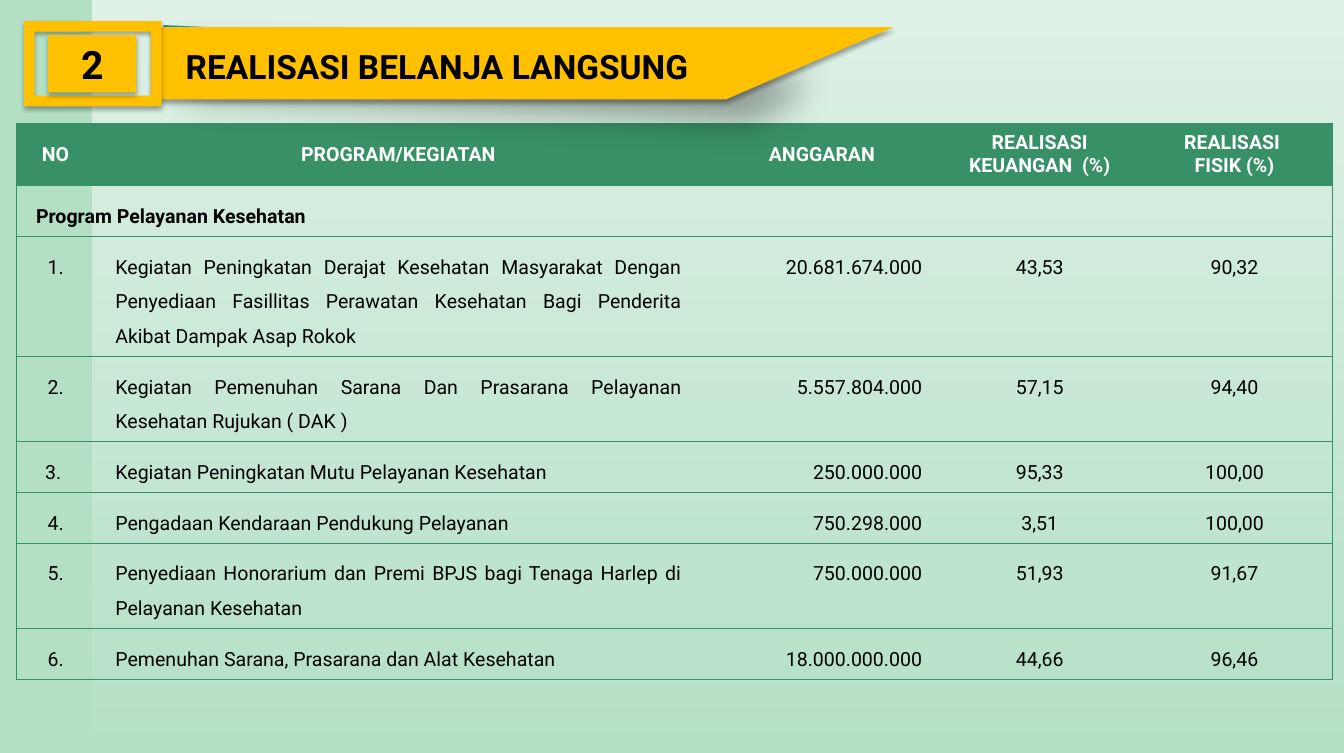
from lxml.etree import SubElement
from pptx import Presentation
from pptx.dml.color import RGBColor
from pptx.enum.shapes import MSO_SHAPE as Preset
from pptx.enum.text import MSO_ANCHOR as Anchor, MSO_AUTO_SIZE as AutoSize, PP_ALIGN as Align
from pptx.oxml.ns import qn
from pptx.util import Inches, Pt

COLORS = {"mint": "B3E0C5", "green": "389066", "teal": "1B91A1",
          "amber": "FFC000", "white": "FFFFFF", "black": "000000"}
NO_GRID_STYLE = "{2D5ABB26-0587-4C30-8999-92F81FD0307C}"
SOFT_SHADOW = (32, 3.5, 2.2, 90)
DEEP_SHADOW = (35, 25, 25, 45)

COLUMN_SHARES = (5.9, 45.11, 17.92, 14.49, 14.49)
ROW_SHARES = (8.27, 5.07, 11.33, 7.73, 5.07, 6, 10.53, 6)
COLUMN_ALIGNS = (Align.CENTER, Align.JUSTIFY, Align.RIGHT, Align.CENTER, Align.CENTER)
HEADINGS = ("NO", "PROGRAM/KEGIATAN", "ANGGARAN", "REALISASI KEUANGAN  (%)", "REALISASI \nFISIK (%)")
SECTION = "Program Pelayanan Kesehatan"
ACTIVITIES = (
    ("1.", "Kegiatan Peningkatan Derajat Kesehatan Masyarakat Dengan Penyediaan Fasillitas "
     "Perawatan Kesehatan Bagi Penderita Akibat Dampak Asap Rokok", "20.681.674.000", "43,53", "90,32"),
    ("2.", "Kegiatan Pemenuhan Sarana Dan Prasarana Pelayanan Kesehatan Rujukan ( DAK )",
     "5.557.804.000", "57,15", "94,40"),
    ("3. ", "Kegiatan Peningkatan Mutu Pelayanan Kesehatan", "250.000.000", "95,33", "100,00"),
    ("4.", "Pengadaan Kendaraan Pendukung Pelayanan", "750.298.000", "3,51", "100,00"),
    ("5.", "Penyediaan Honorarium dan Premi BPJS bagi Tenaga Harlep di Pelayanan Kesehatan",
     "750.000.000", "51,93", "91,67"),
    ("6.", "Pemenuhan Sarana, Prasarana dan Alat Kesehatan", "18.000.000.000", "44,66", "96,46"),
)


class Deck:
    font = "Roboto"

    def __init__(self, width, height):
        self.show = Presentation()
        self.show.slide_width, self.show.slide_height = Inches(width), Inches(height)
        self.slide = self.show.slides.add_slide(self.show.slide_layouts[5])
        self.shapes = self.slide.shapes

    def color(self, name):
        return RGBColor.from_string(COLORS[name])

    def x(self, share):
        return round(self.show.slide_width * share / 100)

    def y(self, share):
        return round(self.show.slide_height * share / 100)

    def box(self, left, top, width, height):
        return self.x(left), self.y(top), self.x(width), self.y(height)

    def background(self, color):
        fill = self.slide.background.fill
        fill.solid()
        fill.fore_color.rgb = self.color(color)

    def paint(self, shape, color, shadow):
        shape.fill.solid()
        shape.fill.fore_color.rgb = self.color(color)
        shape.line.fill.background()
        shape.shadow.inherit = False
        opacity, blur, distance, angle = shadow
        outer = SubElement(shape.element.spPr.find(qn("a:effectLst")), qn("a:outerShdw"),
                           blurRad=str(Pt(blur)), dist=str(Pt(distance)),
                           dir=str(angle * 60000), algn="tl", rotWithShape="0")
        tint = SubElement(outer, qn("a:srgbClr"), val=COLORS["black"])
        SubElement(tint, qn("a:alpha"), val=str(opacity * 1000))
        return shape

    def preset(self, kind, bounds, color, shadow):
        return self.paint(self.shapes.add_shape(kind, *self.box(*bounds)), color, shadow)

    def outline(self, corners, color, shadow):
        start, *others = [(self.x(x), self.y(y)) for x, y in corners]
        builder = self.shapes.build_freeform(*start)
        builder.add_line_segments(others, close=True)
        return self.paint(builder.convert_to_shape(), color, shadow)

    def fading_panel(self, bounds, color, opacities):
        panel = self.shapes.add_shape(Preset.RECTANGLE, *self.box(*bounds))
        panel.shadow.inherit = False
        panel.line.fill.background()
        panel.fill.gradient()
        panel.fill.gradient_angle = 270
        for stop, opacity in zip(panel.fill.gradient_stops, opacities):
            stop.color.rgb = self.color(color)
        tints = panel.element.spPr.find(qn("a:gradFill")).iter(qn("a:srgbClr"))
        for tint, opacity in zip(list(tints), opacities):
            SubElement(tint, qn("a:alpha"), val=str(opacity * 1000))

    def add_text(self, frame, text, size, color="black", bold=True, align=Align.LEFT, spacing=None):
        for index, line in enumerate(text.split("\n")):
            paragraph = frame.add_paragraph() if index else frame.paragraphs[0]
            paragraph.alignment = align
            paragraph.line_spacing = spacing
            run = paragraph.add_run()
            run.text = line
            run.font.name, run.font.size, run.font.bold = self.font, Pt(size), bold
            run.font.color.rgb = self.color(color)

    def title(self, text, bounds, size):
        heading = self.shapes.title
        self.shapes.element.append(heading.element)
        heading.left, heading.top, heading.width, heading.height = self.box(*bounds)
        frame = heading.text_frame
        frame.word_wrap, frame.auto_size = True, AutoSize.NONE
        frame.vertical_anchor = Anchor.MIDDLE
        frame.margin_left, frame.margin_right = 0, Inches(0.1)
        frame.margin_top = frame.margin_bottom = Inches(0.05)
        self.add_text(frame, text, size)

    def badge(self, text, bounds, size):
        number = self.preset(Preset.RECTANGLE, bounds, "amber", SOFT_SHADOW)
        number.text_frame.vertical_anchor = Anchor.MIDDLE
        self.add_text(number.text_frame, text, size, align=Align.CENTER)

    def table(self, bounds, columns, rows):
        grid = self.shapes.add_table(len(rows), len(columns), *self.box(*bounds)).table
        grid.first_row = grid.horz_banding = False
        grid._tbl.tblPr.find(qn("a:tableStyleId")).text = NO_GRID_STYLE
        for column, share in zip(grid.columns, columns):
            column.width = self.x(share)
        for row, share in zip(grid.rows, rows):
            row.height = self.y(share)
        return grid

    def cell(self, cell, edges, fill=None):
        cell.margin_left = cell.margin_right = Inches(0.2)
        cell.margin_top = cell.margin_bottom = Inches(0.08)
        for edge in edges:
            line = SubElement(cell._tc.get_or_add_tcPr(), qn("a:ln" + edge), w=str(Pt(0.5)))
            paint = SubElement(line, qn("a:solidFill"))
            SubElement(paint, qn("a:srgbClr"), val=COLORS["green"])
        if fill:
            cell.fill.solid()
            cell.fill.fore_color.rgb = self.color(fill)
        else:
            cell.fill.background()

    def budget_table(self, bounds):
        grid = self.table(bounds, COLUMN_SHARES, ROW_SHARES)
        last = len(COLUMN_SHARES) - 1
        grid.cell(1, 0).merge(grid.cell(1, last))
        for r, texts in enumerate((HEADINGS, (SECTION,), *ACTIVITIES)):
            for c in range(last + 1):
                cell = grid.cell(r, c)
                left = "L" if c == 0 else ""
                right = "R" if c == last or cell.is_merge_origin else ""
                self.cell(cell, left + right + "TB", None if r else "green")
                if c >= len(texts):
                    continue
                if r == 0:
                    cell.vertical_anchor = Anchor.MIDDLE
                    self.add_text(cell.text_frame, texts[c], 14, "white", align=Align.CENTER)
                else:
                    align = Align.LEFT if r == 1 else COLUMN_ALIGNS[c]
                    self.add_text(cell.text_frame, texts[c], 14, bold=r == 1, align=align, spacing=1.5)


def main():
    deck = Deck(13.39, 7.5)
    deck.background("mint")
    deck.fading_panel((6.87, 0, 93.13, 100), "white", (60, 0))
    deck.budget_table((1.19, 16.4, 97.91, 69.2))
    deck.outline(((12.17, 3.33), (57.8, 7.07), (57.73, 8.8), (54.22, 12.93), (12.02, 9.47)),
                 "teal", DEEP_SHADOW)
    deck.outline(((11.35, 3.6), (66.47, 3.6), (54, 13.2), (11.35, 13.2)), "amber", SOFT_SHADOW)
    deck.preset(Preset.FRAME, (1.79, 2.8, 10.23, 11.33), "amber", SOFT_SHADOW)
    deck.badge("2", (3.58, 4.67, 6.57, 7.6), 28)
    deck.title("REALISASI BELANJA LANGSUNG", (13.82, 5.47, 42.05, 6.67), 24)
    deck.show.save("out.pptx")


if __name__ == "__main__":
    main()
